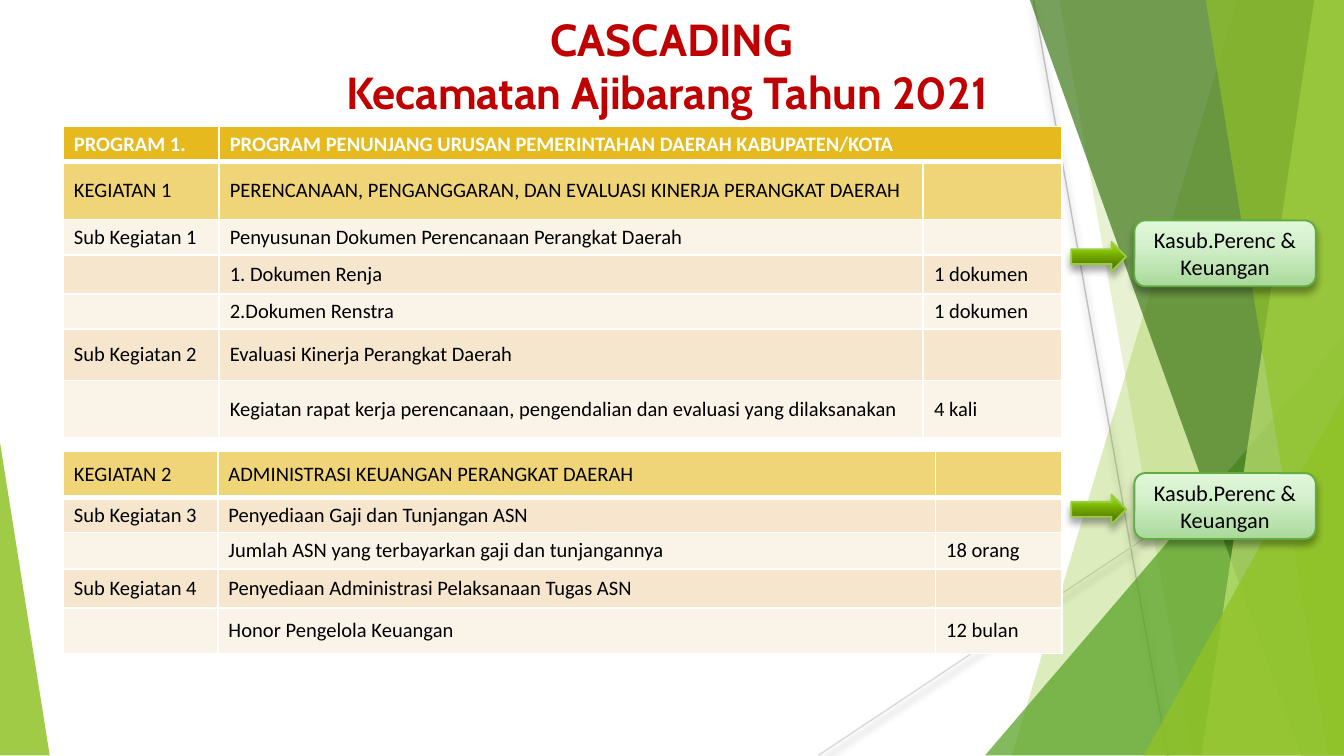
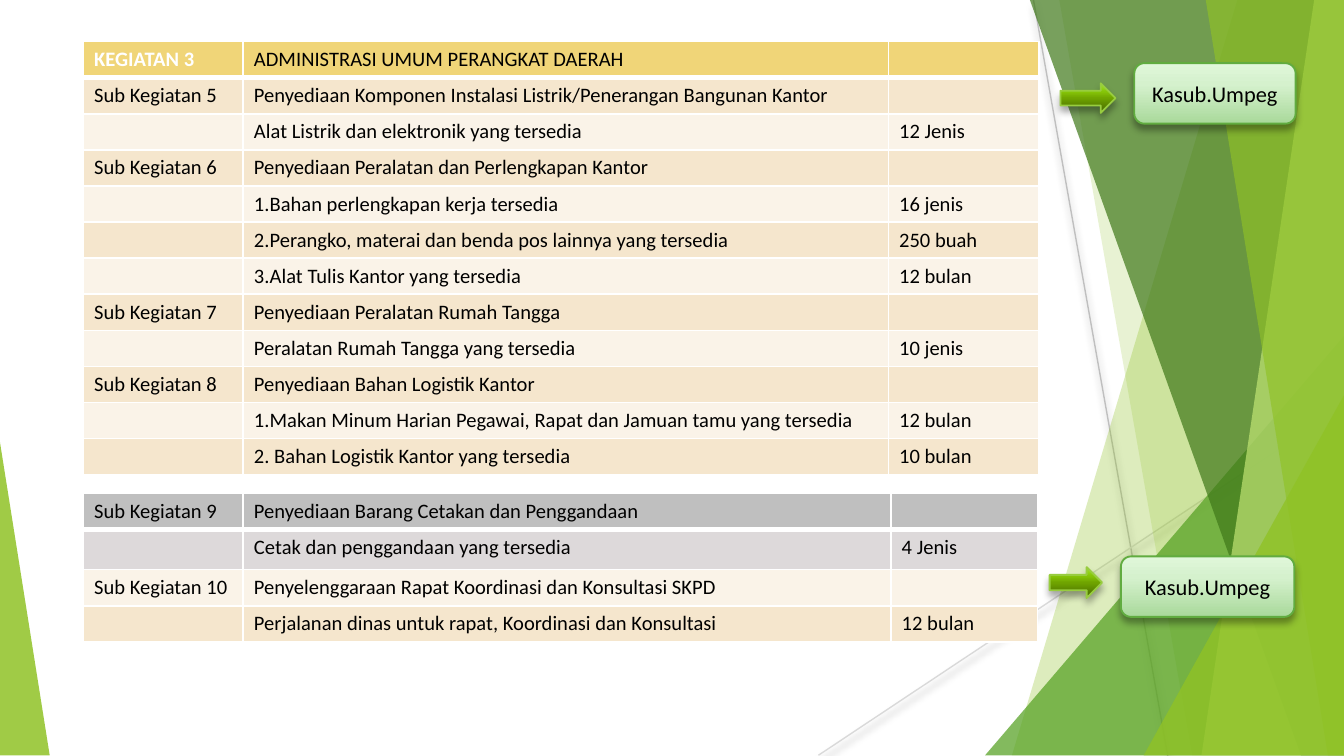
from dataclasses import dataclass

import pptx
import pptx.dml.color
import pptx.enum.shapes
import pptx.enum.text
import pptx.oxml.ns
import pptx.util
from lxml import etree

PX = 9144  # EMU per px, 100 px to the inch
SHAPE = pptx.enum.shapes.MSO_SHAPE
ANCHOR = pptx.enum.text.MSO_ANCHOR
qn = pptx.oxml.ns.qn


@dataclass(frozen=True)
class Theme:
    title_font: str = "Cabin"
    body_font: str = "Calibri"
    title_size: int = 24
    label_size: int = 12
    cell_size: int = 11
    title: str = "C00000"
    ink: str = "000000"
    white: str = "FFFFFF"
    program: str = "E6B91E"
    activity: str = "F0D578"
    grey: str = "BFBFBF"
    pale_grey: str = "DDD9DA"
    bands: tuple = ("FAF3E8", "F5E6CD")  # even rows, odd rows
    arrow_line: str = "98CD3F"
    arrow_stops: tuple = ((0, "456600"), (50, "6FA400"), (70, "84C307"), (100, "A0E727"))
    label_line: str = "61AC40"
    label_stops: tuple = ((0, "A9D99B"), (65, "D5F1CD"), (100, "E0F7DA"))
    lime: str = "90C226"
    leaf: str = "54A021"
    forest: str = "3F7819"
    mint: str = "C0E474"
    rule: str = "BFBFBF"
    pale_rule: str = "D9D9D9"


T = Theme()


def px(*values):
    return [v * PX for v in values]


def rgb(color):
    return pptx.dml.color.RGBColor.from_string(color)


def node(parent, tag, **attrs):
    return etree.SubElement(parent, qn(tag), {k: str(v) for k, v in attrs.items()})


# Formatting
def format_runs(p, font, size, color, bold=False):
    for r in p.runs:
        r.font.name = font
        r.font.size = pptx.util.Pt(size)
        r.font.bold = bold
        r.font.color.rgb = rgb(color)


def set_insets(target, x, y):
    target.margin_left = target.margin_right = x * PX
    target.margin_top = target.margin_bottom = y * PX


def drop_shadow(sp):
    effects = node(sp._element.spPr, "a:effectLst")
    shadow = node(effects, "a:outerShdw", blurRad=pptx.util.Pt(4), dist=pptx.util.Pt(3),
                  dir=5400000, algn="ctr", rotWithShape=0)
    node(node(shadow, "a:srgbClr", val="000000"), "a:alpha", val=35000)


def fill_translucent(sp, color, opacity):
    sp.shadow.inherit = False
    sp.fill.solid()
    sp.fill.fore_color.rgb = rgb(color)
    sp.line.fill.background()
    clr = sp._element.spPr.find(qn("a:solidFill")).find(qn("a:srgbClr"))
    node(clr, "a:alpha", val=opacity * 1000)


def fill_gradient(sp, stops):
    sp.fill.gradient()
    sp.fill.gradient_angle = 90
    stop_list = sp._element.spPr.find(qn("a:gradFill")).find(qn("a:gsLst"))
    for gs in list(stop_list):
        stop_list.remove(gs)
    for pos, color in stops:
        node(node(stop_list, "a:gs", pos=pos * 1000), "a:srgbClr", val=color)


# Backdrop shared by all slides
def add_rule(slide, start, end, color):
    line = slide.shapes.add_connector(
        pptx.enum.shapes.MSO_CONNECTOR.STRAIGHT, *px(*start, *end))
    line.line.color.rgb = rgb(color)
    line.line.width = pptx.util.Pt(0.75)
    drop_shadow(line)


def add_band(slide, top_left, bottom_left, color, opacity):
    """A band from a slanted left edge to the right edge of the slide."""
    top, bottom, right = -1, 562, 1000
    builder = slide.shapes.build_freeform(*px(top_left, top), scale=1.0)
    corners = ((right, top), (right, bottom), (bottom_left, bottom))
    builder.add_line_segments([px(*c) for c in corners], close=True)
    fill_translucent(builder.convert_to_shape(), color, opacity)


def add_triangle(slide, box, apex, color, opacity):
    sp = slide.shapes.add_shape(SHAPE.ISOSCELES_TRIANGLE, *px(*box))
    sp.adjustments[0] = apex
    fill_translucent(sp, color, opacity)


def add_backdrop(slide):
    add_rule(slide, (769, 0), (869, 563), T.rule)
    add_rule(slide, (1000, 302), (609, 562), T.pale_rule)
    add_band(slide, 921, 753, T.lime, 30)
    add_band(slide, 788, 887, T.lime, 20)
    add_triangle(slide, (733, 250, 267, 312), 1, T.leaf, 72)
    add_band(slide, 766, 968, T.forest, 70)
    add_band(slide, 978, 894, T.mint, 70)
    add_band(slide, 897, 988, T.lime, 65)
    add_triangle(slide, (851, 294, 149, 268), 1, T.lime, 80)
    add_triangle(slide, (0, 329, 37, 233), 0, T.lime, 85)


# Content elements
def add_title(slide, text):
    tf = slide.shapes.add_textbox(*px(0, 0, 1000, 97)).text_frame
    tf.word_wrap = True
    tf.vertical_anchor = ANCHOR.MIDDLE
    tf.text = text
    p = tf.paragraphs[0]
    p.alignment = pptx.enum.text.PP_ALIGN.CENTER
    format_runs(p, T.title_font, T.title_size, T.title, bold=True)


def add_glossy(slide, preset, box, stops, line_color):
    sp = slide.shapes.add_shape(preset, *px(*box))
    fill_gradient(sp, stops)
    sp.line.color.rgb = rgb(line_color)
    sp.line.width = pptx.util.Pt(1)
    drop_shadow(sp)
    return sp


def add_owner(slide, text, arrow_box, label_box):
    """An arrow and the label of the section in charge."""
    add_glossy(slide, SHAPE.RIGHT_ARROW, arrow_box, T.arrow_stops, T.arrow_line)
    sp = add_glossy(slide, SHAPE.ROUNDED_RECTANGLE, label_box, T.label_stops, T.label_line)
    tf = sp.text_frame
    tf.word_wrap = True
    tf.vertical_anchor = ANCHOR.MIDDLE
    set_insets(tf, 7, 4)
    tf.text = text
    p = tf.paragraphs[0]
    p.alignment = pptx.enum.text.PP_ALIGN.CENTER
    format_runs(p, T.body_font, T.label_size, T.ink)


def set_borders(cell, row):
    widths = {"L": 1, "R": 1, "T": 3 if row == 1 else 1, "B": 3 if row == 0 else 1}
    tc_pr = cell._tc.get_or_add_tcPr()
    for side, width in widths.items():
        ln = node(tc_pr, f"a:ln{side}", w=pptx.util.Pt(width))
        node(node(ln, "a:solidFill"), "a:srgbClr", val=T.white)


def fill_cell(cell, text, row, fill, anchor, inverse):
    set_borders(cell, row)
    cell.fill.solid()
    cell.fill.fore_color.rgb = rgb(fill)
    cell.vertical_anchor = anchor
    set_insets(cell, 8, 4)
    p = cell.text_frame.paragraphs[0]
    if text:
        p.text = text
        format_runs(p, T.body_font, T.cell_size, T.white if inverse else T.ink, inverse)
    else:  # keeps an empty cell from stretching its row
        node(p._p, "a:endParaRPr", sz=T.cell_size * 100)


def add_plan(slide, left, top, cols, heights, rows, heads, anchor=ANCHOR.TOP, inverse=0):
    """heads: fills of the leading rows; inverse: white bold cells in the first row."""
    frame = slide.shapes.add_table(
        len(rows), len(cols), *px(left, top, sum(cols), sum(heights)))
    table = frame.table
    for col, width in zip(table.columns, cols):
        col.width = width * PX
    for i, texts in enumerate(rows):
        table.rows[i].height = heights[i] * PX
        fill = heads[i] if i < len(heads) else T.bands[i % 2]
        for j, text in enumerate(texts):
            fill_cell(table.cell(i, j), text, i, fill, anchor, i == 0 and j < inverse)
    return table


# Slides
def build_planning(slide):
    add_title(slide, "CASCADING\vKecamatan Ajibarang Tahun 2021 ")
    table = add_plan(slide, 47, 94, (116, 524, 103), (26, 43, 26, 29, 26, 38, 43), [
        ("PROGRAM 1.", "PROGRAM PENUNJANG URUSAN PEMERINTAHAN DAERAH KABUPATEN/KOTA", ""),
        ("KEGIATAN 1", "PERENCANAAN, PENGANGGARAN, DAN EVALUASI KINERJA PERANGKAT DAERAH", ""),
        ("Sub Kegiatan 1", "Penyusunan Dokumen Perencanaan Perangkat Daerah", ""),
        ("", "1. Dokumen Renja", "1 dokumen"),
        ("", "2.Dokumen Renstra", "1 dokumen"),
        ("Sub Kegiatan 2", "Evaluasi Kinerja Perangkat Daerah", ""),
        ("", "Kegiatan rapat kerja perencanaan, pengendalian dan evaluasi yang dilaksanakan",
         "4 kali"),
    ], (T.program, T.activity), ANCHOR.MIDDLE, inverse=2)
    table.cell(0, 1).merge(table.cell(0, 2))
    add_plan(slide, 47, 336, (115, 534, 94), (34, 26, 27, 29, 34), [
        ("KEGIATAN 2", "ADMINISTRASI KEUANGAN PERANGKAT DAERAH", ""),
        ("Sub Kegiatan 3", "Penyediaan Gaji dan Tunjangan ASN", ""),
        ("", "Jumlah ASN yang terbayarkan gaji dan tunjangannya", "18 orang"),
        ("Sub Kegiatan 4", "Penyediaan Administrasi Pelaksanaan Tugas ASN", ""),
        ("", "Honor Pengelola Keuangan", "12 bulan"),
    ], (T.activity,), ANCHOR.MIDDLE)
    for top in (164, 352):
        add_owner(slide, "Kasub.Perenc & Keuangan",
                  (797, top + 16, 41, 22), (844, top, 135, 49))


def build_general_affairs(slide):
    add_plan(slide, 62, 31, (119, 480, 112), [26] * 12, [
        ("KEGIATAN 3", "ADMINISTRASI UMUM PERANGKAT DAERAH", ""),
        ("Sub Kegiatan 5", "Penyediaan Komponen Instalasi Listrik/Penerangan Bangunan Kantor", ""),
        ("", "Alat Listrik dan elektronik yang tersedia", "12 Jenis"),
        ("Sub Kegiatan 6", "Penyediaan Peralatan dan Perlengkapan Kantor", ""),
        ("", "1.Bahan perlengkapan kerja tersedia", "16 jenis"),
        ("", "2.Perangko, materai dan benda pos lainnya yang tersedia", "250 buah"),
        ("", "3.Alat Tulis Kantor yang tersedia", "12 bulan"),
        ("Sub Kegiatan 7", "Penyediaan Peralatan Rumah Tangga", ""),
        ("", "Peralatan Rumah Tangga yang tersedia", "10 jenis"),
        ("Sub Kegiatan 8", "Penyediaan Bahan Logistik Kantor", ""),
        ("", "1.Makan Minum Harian Pegawai, Rapat dan Jamuan tamu yang tersedia", "12 bulan"),
        ("", "2. Bahan Logistik Kantor yang tersedia", "10 bulan"),
    ], (T.activity,), inverse=1)
    add_plan(slide, 62, 367, (119, 482, 109), (26, 30, 26, 26), [
        ("Sub Kegiatan 9", "Penyediaan Barang Cetakan dan Penggandaan", ""),
        ("", "Cetak dan penggandaan yang tersedia", "4 Jenis"),
        ("Sub Kegiatan 10", "Penyelenggaraan Rapat Koordinasi dan Konsultasi SKPD", ""),
        ("", "Perjalanan dinas untuk rapat, Koordinasi dan Konsultasi", "12 bulan"),
    ], (T.grey, T.pale_grey))
    add_owner(slide, "Kasub.Umpeg", (789, 62, 41, 22), (844, 47, 120, 45))
    add_owner(slide, "Kasub.Umpeg", (781, 422, 39, 23), (834, 414, 129, 45))


def main():
    prs = pptx.Presentation()
    prs.slide_width = 1000 * PX
    prs.slide_height = prs.slide_width * 9 // 16
    for build in (build_planning, build_general_affairs):
        slide = prs.slides.add_slide(prs.slide_layouts[6])
        add_backdrop(slide)
        build(slide)
    prs.save("out.pptx")


if __name__ == "__main__":
    main()
